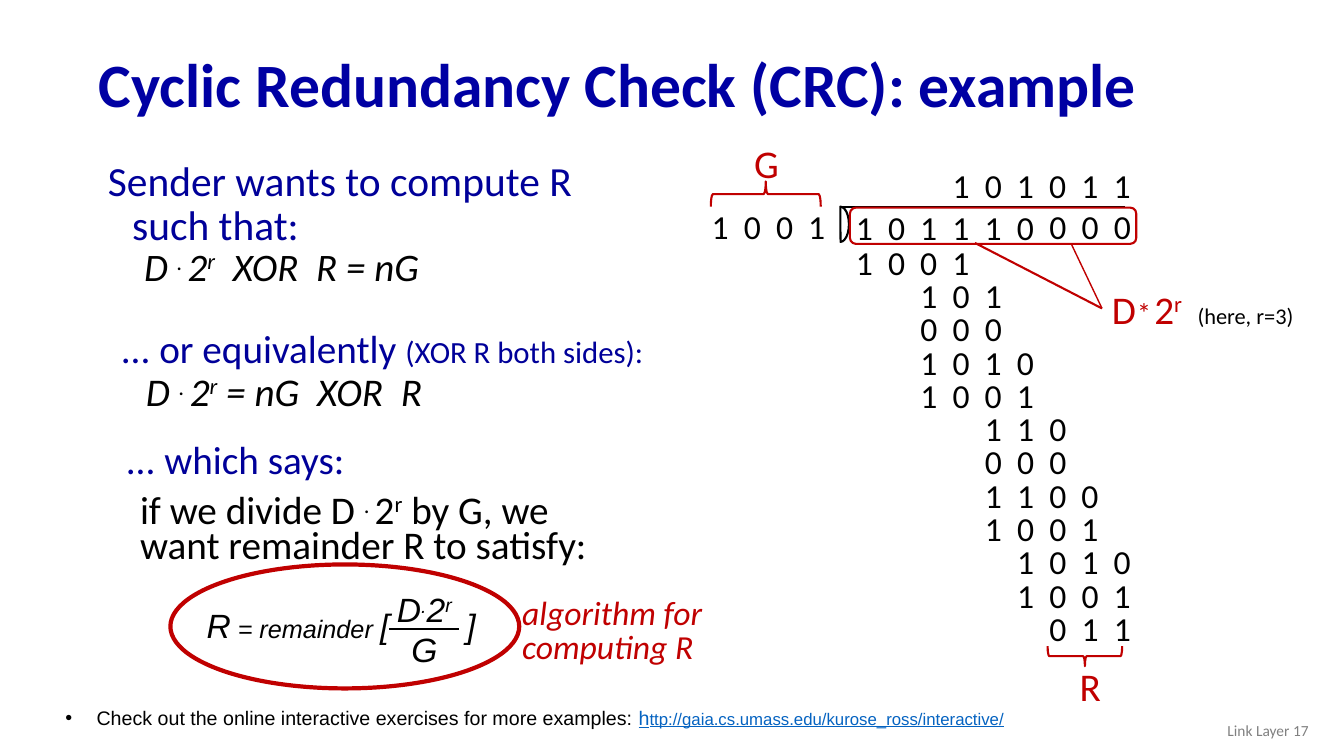
from lxml.etree import SubElement
from pptx import Presentation
from pptx.dml.color import RGBColor
from pptx.enum.shapes import MSO_CONNECTOR, MSO_SHAPE
from pptx.enum.text import MSO_ANCHOR, MSO_AUTO_SIZE, PP_ALIGN
from pptx.oxml.ns import qn
from pptx.util import Inches, Pt

RED, NAVY, BLACK = "C00000", "000099", "000000"
PITCH = 0.32
D_TIMES_2R = [("D ", {}), (". ", {"base": 26}), ("2", {}), ("r", {"base": 30})]
WIDE_SPACE = (" ", {"spacing": 6.3})
XOR_R = [WIDE_SPACE, ("XOR", {}), WIDE_SPACE, ("R", {})]
DIVISION_STEPS = [
    (0, "1001"), (2, "101"), (2, "000"), (2, "1010"), (2, "1001"), (4, "110"),
    (4, "000"), (4, "1100"), (4, "1001"), (5, "1010"), (5, "1001"), (6, "011"),
]


def rgb(color):
    """Turn a hex string into a colour."""
    return RGBColor.from_string(color)


def fmt(size, color=BLACK, name="Calibri", **more):
    """Collect the format values of a run."""
    return {"size": Pt(size), "color": color, "name": name, **more}


def para(runs, style, indent=(0, 0), bullet=None, **attrs):
    """Describe a paragraph; each run overrides the shared style."""
    if isinstance(runs, str):
        runs = [(runs, {})]
    runs = [(text, {**style, **own}) for text, own in runs]
    return runs, indent, bullet, attrs


def add_run(p, text, values):
    """Add one formatted run to a paragraph."""
    r = p.add_run()
    r.text = text
    rPr = r._r.get_or_add_rPr()
    for key, value in values.items():
        if key == "color":
            r.font.color.rgb = rgb(value)
        elif key == "base":
            rPr.set("baseline", str(value * 1000))
        elif key == "spacing":
            rPr.set("spc", str(round(value * 100)))
        else:
            setattr(r.font, key, value)


def fill_text(sp, paras, anchor=MSO_ANCHOR.TOP):
    """Write described paragraphs into a shape."""
    tf = sp.text_frame
    tf.word_wrap = True
    tf.auto_size = MSO_AUTO_SIZE.NONE
    tf.vertical_anchor = anchor
    for i, (runs, (left, first), bullet, attrs) in enumerate(paras):
        p = tf.add_paragraph() if i else tf.paragraphs[0]
        pPr = p._p.get_or_add_pPr()
        pPr.set("marL", str(Inches(left)))
        pPr.set("indent", str(Inches(first)))
        if bullet:
            SubElement(pPr, qn("a:buFont")).set("typeface", "Arial")
            SubElement(pPr, qn("a:buChar")).set("char", bullet)
        else:
            SubElement(pPr, qn("a:buNone"))
        for key, value in {"space_before": Pt(0), **attrs}.items():
            setattr(p, key, value)
        for text, values in runs:
            add_run(p, text, values)


def text_box(slide, box, *paras, anchor=MSO_ANCHOR.TOP):
    """Add a text box at left, top, width, height."""
    sp = slide.shapes.add_textbox(*map(Inches, box))
    fill_text(sp, paras, anchor)
    return sp


def placeholder(sp, box, *paras, anchor=MSO_ANCHOR.TOP):
    """Move a placeholder and write its text."""
    sp.left, sp.top, sp.width, sp.height = map(Inches, box)
    fill_text(sp, paras, anchor)


def digits(slide, x, y, bits):
    """Set a row of binary digits, letter-spaced to the column pitch."""
    box = (x, y, 0.37 + PITCH * (len(bits) - 1), 0.5)
    sp = text_box(slide, box, para(" ".join(bits), fmt(24, spacing=2.71)))
    sp.text_frame.margin_right = 0


def outline(slide, kind, box, color=RED, width=1.5, rotation=0):
    """Add an unfilled preset shape."""
    sp = slide.shapes.add_shape(kind, *map(Inches, box))
    sp.shadow.inherit = False
    sp.fill.background()
    sp.line.color.rgb = rgb(color)
    sp.line.width = Pt(width)
    sp.rotation = rotation
    return sp


def line(slide, ends, color=RED, width=1.5):
    """Add a straight line from x1, y1 to x2, y2."""
    sp = slide.shapes.add_connector(MSO_CONNECTOR.STRAIGHT, *map(Inches, ends))
    sp.line.color.rgb = rgb(color)
    sp.line.width = Pt(width)
    SubElement(sp._element.spPr, qn("a:effectLst"))


def derivation(slide):
    """Write the reasoning on the left."""
    blue = fmt(28, NAVY)
    formula = fmt(28, italic=True)
    step = {"indent": (0.76, -0.25), "level": 1, "space_before": Pt(5)}
    placeholder(
        slide.placeholders[1], (0.82, 1.54, 5.59, 1.46),
        para("Sender wants to compute R such that:", fmt(29.6, NAVY),
             (0.39, -0.24), line_spacing=0.9),
        para(D_TIMES_2R + XOR_R + [(" = nG", {})], fmt(27.8, italic=True),
             line_spacing=0.65, **step))
    text_box(
        slide, (0.84, 3.28, 5.74, 0.96),
        para([("... or equivalently ", {}),
              ("(XOR R both sides):", {"size": Pt(22)})],
             blue, (0.39, -0.13), line_spacing=0.75),
        para(D_TIMES_2R + [(" = nG", {})] + XOR_R, formula,
             line_spacing=0.75, **step))
    text_box(
        slide, (0.79, 4.38, 5.45, 1.37),
        para("... which says:", blue, (0.36, 0), line_spacing=0.75),
        para([("if we divide ", {})] + D_TIMES_2R
             + [(" by G, we want remainder R to satisfy:", {})],
             fmt(28), (0.5, 0), line_spacing=0.75, space_before=Pt(10)))


def remainder_formula(slide):
    """Draw the circled formula for R."""
    arial = fmt(24, name="Arial", italic=True)
    small = {"size": Pt(18)}
    fraction = [(text.strip(), own) for text, own in D_TIMES_2R]
    text_box(slide, (3.48, 5.79, 1.46, 0.9),
             para(fraction, arial, alignment=PP_ALIGN.CENTER),
             para("G", arial, alignment=PP_ALIGN.CENTER))
    line(slide, (3.86, 6.24, 4.55, 6.24), BLACK)
    text_box(slide, (1.95, 5.95, 3.05, 0.52),
             para([("R", {}), (" = remainder ", small), ("[", {}),
                   (" ", {**small, "spacing": 50}), ("]", {})], arial))
    outline(slide, MSO_SHAPE.OVAL, (1.69, 5.6, 3.46, 1.23), width=3)
    note = fmt(24, RED, italic=True)
    text_box(slide, (5.08, 5.88, 2.08, 0.79),
             para("algorithm for", note, line_spacing=0.85),
             para("computing R", note, line_spacing=0.85))


def long_division(slide):
    """Draw the binary long division on the right."""
    left = 8.39
    digits(slide, left + 3 * PITCH, 1.59, "101011")
    digits(slide, 6.96, 1.99, "1001")
    digits(slide, left, 2, "101110")
    digits(slide, left + 6 * PITCH, 1.99, "000")
    for row, (column, bits) in enumerate(DIVISION_STEPS):
        digits(slide, left + column * PITCH, 2.35 + 0.33 * row, bits)
    line(slide, (8.35, 2.05, 11.16, 2.05), BLACK)
    pie = outline(slide, MSO_SHAPE.PIE, (8.16, 2.14, 0.35, 0.17), BLACK,
                  rotation=270)
    pie.adjustments[0], pie.adjustments[1] = 0, 107.54
    outline(slide, MSO_SHAPE.ROUNDED_RECTANGLE, (8.43, 2.06, 2.84, 0.36))
    outline(slide, MSO_SHAPE.RIGHT_BRACE, (7.47, 1.38, 0.25, 1.09), rotation=270)
    outline(slide, MSO_SHAPE.RIGHT_BRACE, (10.66, 6.14, 0.2, 0.74), rotation=90)
    line(slide, (9.67, 2.41, 10.93, 3.06))
    line(slide, (10.63, 2.43, 10.93, 3.06), width=1)
    red = fmt(28, RED)
    for label, x, y in [("G", 7.38, 1.33), ("D", 10.93, 2.78), ("R", 10.61, 6.52)]:
        text_box(slide, (x, y, 0.45, 0.57), para(label, red))
    text_box(slide, (11.18, 2.88, 0.34, 0.44), para("*", fmt(20, RED)))
    text_box(slide, (11.35, 2.78, 1.7, 0.57),
             para([("2", {}), ("r", {"base": 30}),
                   (" ", fmt(16, spacing=7.5)), ("(here, r=3)", fmt(16))], red))


def main():
    """Build the slide and save it."""
    prs = Presentation()
    prs.slide_width, prs.slide_height = Inches(13.33), Inches(7.5)
    slide = prs.slides.add_slide(prs.slide_layouts[1])
    placeholder(slide.shapes.title, (0.88, 0.38, 11.5, 0.98),
                para("Cyclic Redundancy Check (CRC): example",
                     fmt(44, "0000A3", bold=True), line_spacing=0.9,
                     alignment=PP_ALIGN.LEFT),
                anchor=MSO_ANCHOR.MIDDLE)
    derivation(slide)
    remainder_formula(slide)
    long_division(slide)
    link = {"color": "0563C1", "underline": True}
    text_box(slide, (0.55, 6.95, 10.43, 0.34),
             para([("Check out the online interactive exercises for more examples: ", {}),
                   ("h", link),
                   ("ttp://gaia.cs.umass.edu/kurose_ross/interactive/",
                    {**link, "size": Pt(12)})],
                  fmt(14, name="Arial"), (0.31, -0.31), "•"))
    text_box(slide, (10.08, 7.05, 3, 0.4),
             para("Link Layer 17", fmt(11, "808080"), alignment=PP_ALIGN.RIGHT),
             anchor=MSO_ANCHOR.MIDDLE)
    prs.save("out.pptx")


if __name__ == "__main__":
    main()
